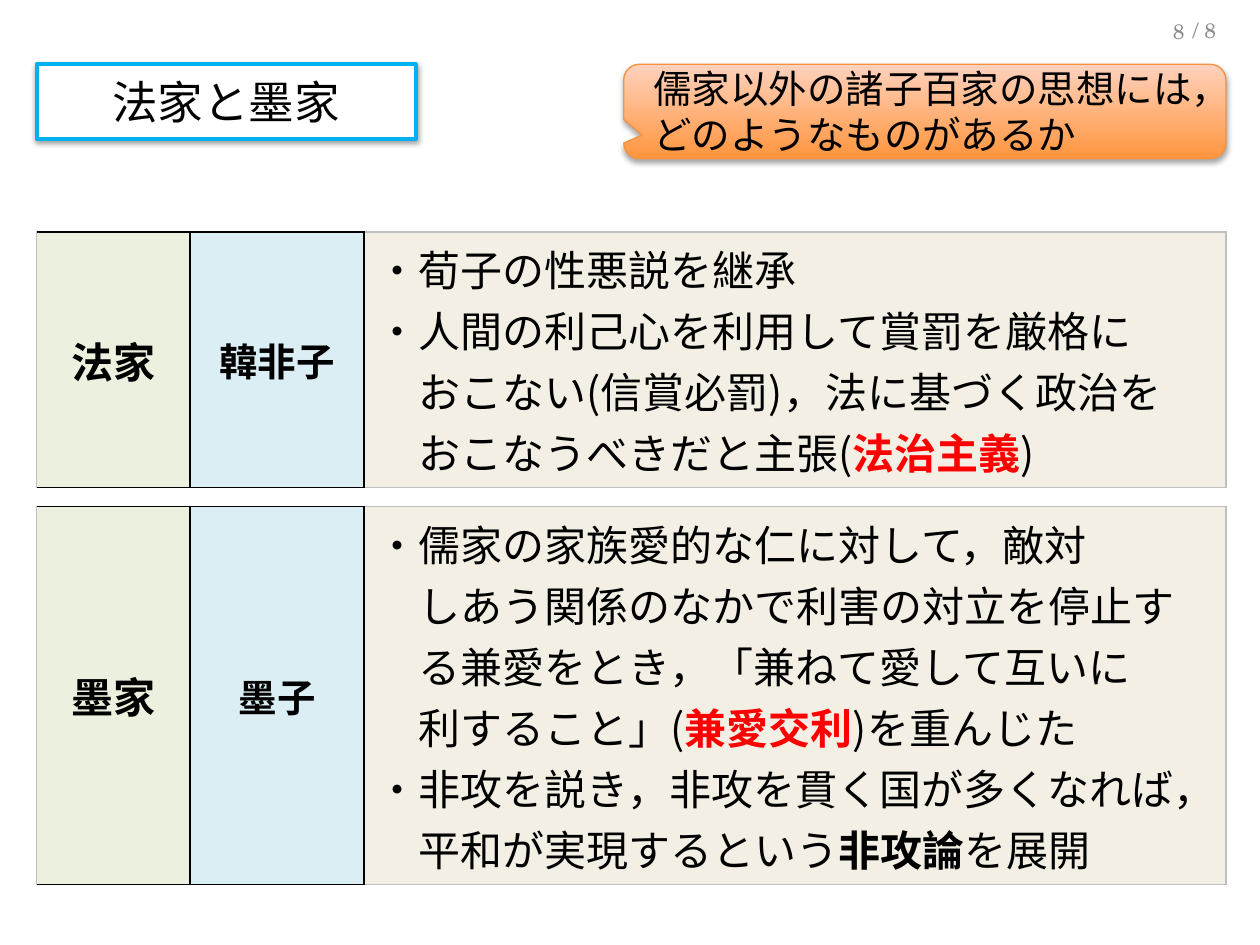
"""Build the slide on the Legalists and the Mohists."""
from lxml import etree
from pptx import Presentation
from pptx.dml.color import RGBColor
from pptx.enum.shapes import MSO_SHAPE as Kind
from pptx.enum.text import MSO_ANCHOR as Anchor, PP_ALIGN as Align
from pptx.oxml import parse_xml
from pptx.oxml.ns import nsdecls, qn
from pptx.util import Inches, Pt

SANS = "Noto Sans CJK JP"
SERIF = "TeX Gyre Schola"
tint = RGBColor.from_string


def write(para, text, size, color="000000", bold=False, face=SANS):
    run = para.add_run()
    run.text = text
    font = run.font
    font.size, font.bold, font.name = Pt(size), bold, face
    font.color.rgb = tint(color)
    east = etree.SubElement(font._element, qn("a:ea"))
    east.set("typeface", face)


def shade(shape, alpha, dist):
    shape._element.spPr.append(parse_xml(
        f'<a:effectLst {nsdecls("a")}><a:outerShdw blurRad="{Pt(3.1)}" '
        f'dist="{Pt(dist)}" dir="5400000" rotWithShape="0">'
        f'<a:srgbClr val="000000"><a:alpha val="{alpha}000"/></a:srgbClr>'
        '</a:outerShdw></a:effectLst>'))


deck = Presentation()
deck.slide_width, deck.slide_height = Inches(10), Inches(7.5)
slide = deck.slides.add_slide(deck.slide_layouts[5])
shapes = slide.shapes

for text, left, top in [("/ 8", 7.42, 0.11), ("8", 7.17, 0.12)]:
    box = shapes.add_textbox(Inches(left), Inches(top), Inches(2.33), Inches(0.26))
    frame = box.text_frame
    frame.word_wrap = True
    frame.vertical_anchor = Anchor.MIDDLE
    para = frame.paragraphs[0]
    para.alignment = Align.RIGHT
    write(para, text, 12, "8C8C8C", face=SERIF)

title = shapes.title
title.left, title.top = Inches(0.29), Inches(0.51)
title.width, title.height = Inches(3.01), Inches(0.59)
title.fill.solid()
title.fill.fore_color.rgb = tint("FFFFFF")
title.line.color.rgb = tint("00B0F0")
title.line.width = Pt(2.25)
shade(title, 38, 1.6)
title.text_frame.vertical_anchor = Anchor.MIDDLE
para = title.text_frame.paragraphs[0]
para.alignment = Align.CENTER
write(para, "法家と墨家", 26)

call = shapes.add_shape(Kind.ROUNDED_RECTANGULAR_CALLOUT, Inches(4.95),
                        Inches(0.51), Inches(4.78), Inches(0.75))
for i, value in enumerate([-0.469, 0.25, 0.167]):
    call.adjustments[i] = value
call.fill.gradient()
call.fill.gradient_angle = 90
for stop, color in zip(call.fill.gradient_stops, ["FF953E", "FFD2BD"]):
    stop.color.rgb = tint(color)
call.line.color.rgb = tint("F69240")
call.line.width = Pt(0.75)
shade(call, 35, 1.8)
frame = call.text_frame
frame.word_wrap = True
frame.vertical_anchor = Anchor.MIDDLE
frame.margin_left = Inches(0.2)
para = frame.paragraphs[0]
para.alignment = Align.LEFT
para.line_spacing = Pt(26)
write(para, "儒家以外の諸子百家の思想には，どのようなものがあるか", 22)

RED, BOLD = ("FF0000", True), ("000000", True)
schools = [
    (1.84, 2.03, "法家", "韓非子", [
        [("・荀子の性悪説を継承",)],
        [("・人間の利己心を利用して賞罰を厳格に",)],
        [("おこない(信賞必罰)，法に基づく政治を",)],
        [("おこなうべきだと主張(",), ("法治主義", *RED), (")",)],
    ]),
    (4.02, 3, "墨家", "墨子", [
        [("・儒家の家族愛的な仁に対して，敵対",)],
        [("しあう関係のなかで利害の対立を停止す",)],
        [("る兼愛をとき，「兼ねて愛して互いに",)],
        [("利すること」(",), ("兼愛交利", *RED), (")を重んじた",)],
        [("・非攻を説き，非攻を貫く国が多くなれば，",)],
        [("平和が実現するという",), ("非攻論", *BOLD), ("を展開",)],
    ]),
]
widths = [1.22, 1.38, 6.84]
fills = ["EBF1DE", "DBEEF4", "F3EFE5"]
GRAY, BLACK = "BFBFBF", "000000"
edges = [(GRAY, BLACK, BLACK, BLACK), (BLACK,) * 4, (BLACK, GRAY, GRAY, GRAY)]

for top, height, school, thinker, lines in schools:
    table = shapes.add_table(1, 3, Inches(0.29), Inches(top),
                             Inches(sum(widths)), Inches(height)).table
    table.first_row = table.horz_banding = False
    for col, width in zip(table.columns, widths):
        col.width = Inches(width)
    cells = [table.cell(0, i) for i in range(3)]
    for cell, fill, edge in zip(cells, fills, edges):
        cell.vertical_anchor = Anchor.MIDDLE
        props = cell._tc.get_or_add_tcPr()
        for side, color in zip("LRTB", edge):
            props.append(parse_xml(
                f'<a:ln{side} {nsdecls("a")} w="{Pt(1)}"><a:solidFill>'
                f'<a:srgbClr val="{color}"/></a:solidFill></a:ln{side}>'))
        cell.fill.solid()
        cell.fill.fore_color.rgb = tint(fill)
    for cell, text, size in zip(cells, [school, thinker], [24, 22]):
        cell.margin_left = cell.margin_right = Inches(0.07)
        cell.margin_top = cell.margin_bottom = 0
        para = cell.text_frame.paragraphs[0]
        para.alignment = Align.CENTER
        write(para, text, size, bold=True)
    frame = cells[2].text_frame
    for i, line in enumerate(lines):
        para = frame.add_paragraph() if i else frame.paragraphs[0]
        if not line[0][0].startswith("・"):
            para._p.get_or_add_pPr().set("marL", str(Pt(24)))
        for text, *style in line:
            write(para, text, 24, *style)

deck.save("out.pptx")
